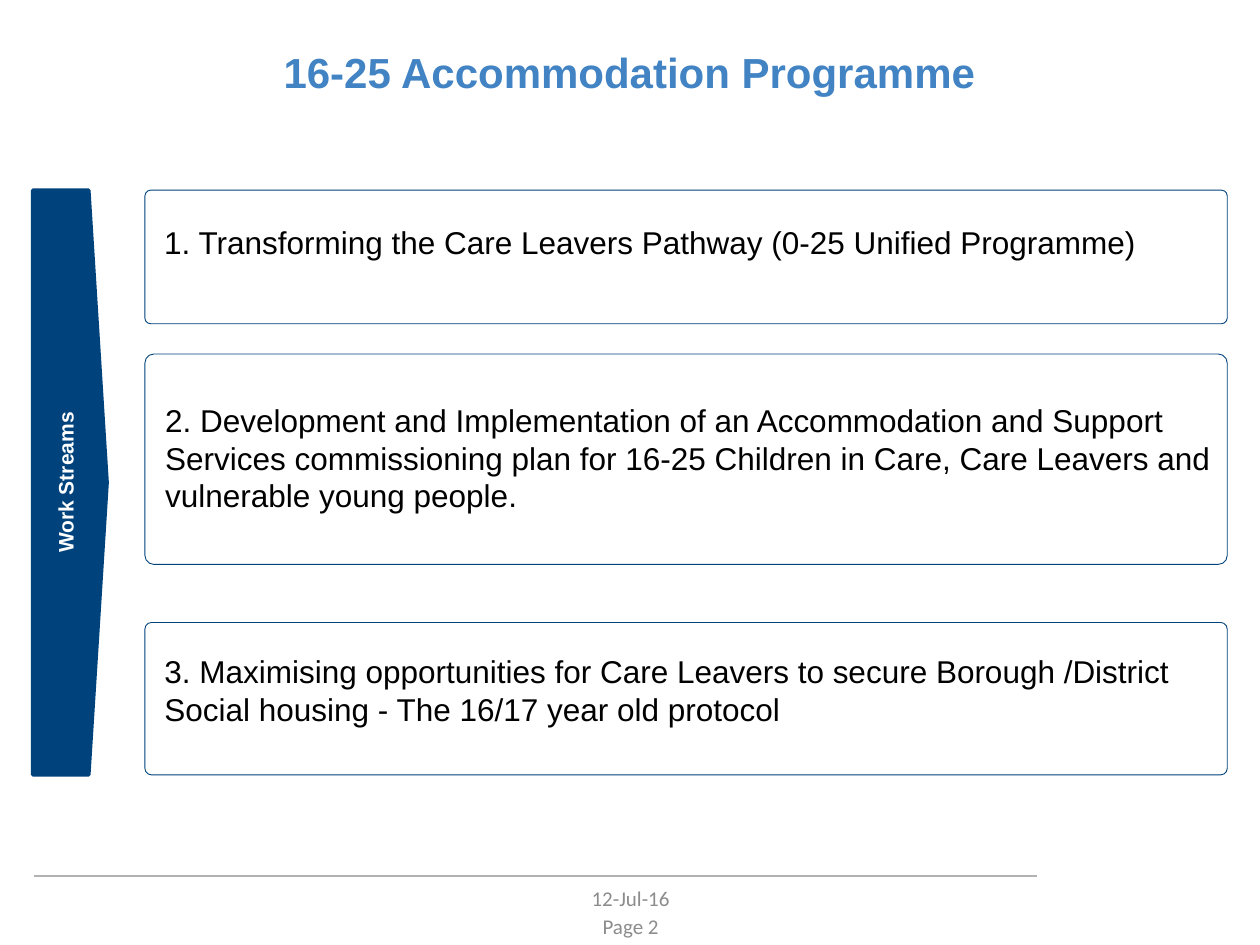
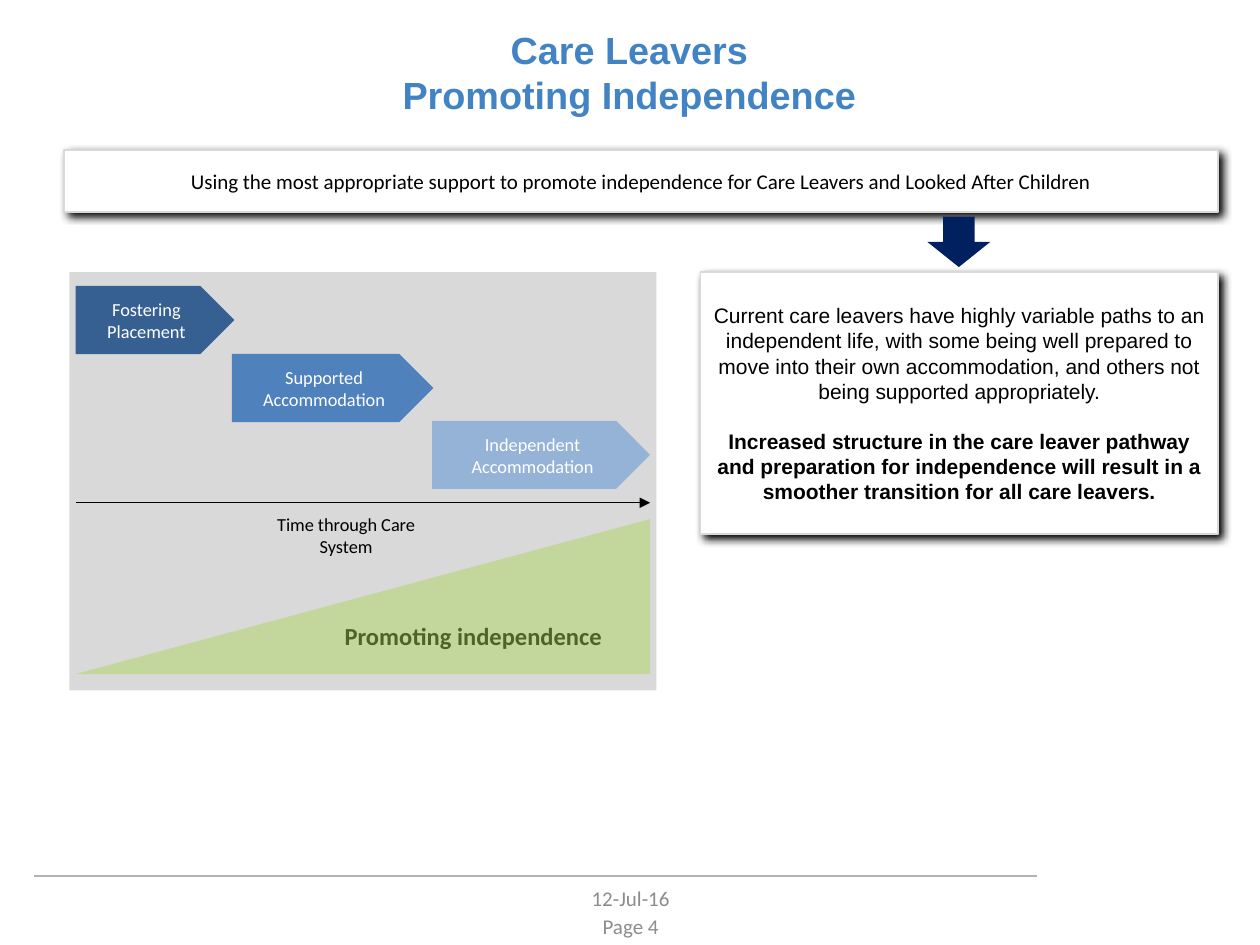
import pptx
import pptx.util
import pptx.dml.color
import pptx.enum.shapes
import pptx.enum.text
import pptx.oxml
import pptx.oxml.ns

Inches = pptx.util.Inches
Pt = pptx.util.Pt
SHAPE = pptx.enum.shapes.MSO_SHAPE
ALIGN = pptx.enum.text.PP_ALIGN
ANCHOR = pptx.enum.text.MSO_ANCHOR

NAVY = "00427C"
TITLE_BLUE = "4283C4"
FOOTER_GREY = "8C8C8C"
RULE_GREY = "B2B2B2"
PANEL_GREY = "D9D9D9"
WHITE = "FFFFFF"
BLACK = "000000"
DATE = "12-Jul-16"


def colour(value):
    """Turn a hex string into a colour."""
    return pptx.dml.color.RGBColor.from_string(value)


def write(shape, *texts, font="Arial", size=12, color=BLACK, bold=False, align=ALIGN.CENTER,
          anchor=ANCHOR.MIDDLE, insets=(0.1, 0.05, 0.1, 0.05), gap=0):
    """Fill a shape with one paragraph per text."""
    frame = shape.text_frame
    frame.word_wrap = True
    frame.vertical_anchor = anchor
    frame.margin_left, frame.margin_top, frame.margin_right, frame.margin_bottom = map(Inches, insets)
    for index, text in enumerate(texts):
        para = frame.add_paragraph() if index else frame.paragraphs[0]
        para.alignment = align
        if index:
            para.space_before = Pt(gap)
        para.text = text
        for span in para.runs:
            span.font.name = font
            span.font.size = Pt(size)
            span.font.bold = bold
            span.font.color.rgb = colour(color)
    return shape


def add_text(shapes, box, *texts, **style):
    """Add a text box."""
    return write(shapes.add_textbox(*map(Inches, box)), *texts, **style)


def add_shape(shapes, kind, box, fill=None, line=None, width=1, adjust=None):
    """Add a preset shape without its theme look."""
    shape = shapes.add_shape(kind, *map(Inches, box))
    shape.shadow.inherit = False
    if fill:
        shape.fill.solid()
        shape.fill.fore_color.rgb = colour(fill)
    else:
        shape.fill.background()
    if line:
        shape.line.color.rgb = colour(line)
        shape.line.width = Pt(width)
    else:
        shape.line.fill.background()
    if adjust is not None:
        shape.adjustments[0] = adjust
    return shape


def add_rule(shapes, left, right, top, color, width, arrow=False):
    """Add a level line, with an arrowhead if asked."""
    rule = shapes.add_connector(pptx.enum.shapes.MSO_CONNECTOR.STRAIGHT,
                                Inches(left), Inches(top), Inches(right), Inches(top))
    rule.line.color.rgb = colour(color)
    rule.line.width = Pt(width)
    if arrow:
        pptx.oxml.ns.qn("a:tailEnd")
        rule.line._get_or_add_ln().append(pptx.oxml.parse_xml(
            f'<a:tailEnd {pptx.oxml.ns.nsdecls("a")} type="triangle"/>'))
    rule._element.spPr.append(pptx.oxml.parse_xml(f'<a:effectLst {pptx.oxml.ns.nsdecls("a")}/>'))


def add_page(deck, title, size, number):
    """Add a blank page with the shared title and footer."""
    page = deck.slides.add_slide(deck.slide_layouts[6])
    add_rule(page.shapes, 0.27, 8.23, 6.95, RULE_GREY, 1)
    for top, text in ((7.02, DATE), (7.24, f"Page {number}")):
        add_text(page.shapes, (3.42, top, 3.17, 0.22), text, font="Calibri", color=FOOTER_GREY)
    add_text(page.shapes, (0.27, 0.3, 9.45, 0.54), title, size=size, color=TITLE_BLUE, bold=True)
    return page


def add_streams(page, box):
    """Draw the work streams band and its three cards."""
    left, top, width, height = box
    band = add_shape(page.shapes, SHAPE.PENTAGON, (left, top, 0.59, height), NAVY, NAVY, 2, 0.246)
    write(band, "Work Streams", color=WHITE, bold=True, insets=(0, 0, 0, 0))
    band.text_frame._txBody.bodyPr.set("vert", "vert270")
    cards = (
        (0, 1.06, 0.25, "1. Transforming the Care Leavers Pathway (0-25 Unified Programme)"),
        (1.3, 1.67, 0.35, "2. Development and Implementation of an Accommodation and Support Services "
         "commissioning plan for 16-25 Children in Care, Care Leavers and vulnerable young people."),
        (3.43, 1.21, 0.22, "3. Maximising opportunities for Care Leavers to secure Borough /District "
         "Social housing - The 16/17 year old protocol"),
    )
    indent = 0.89
    for offset, depth, inset, text in cards:
        card = add_shape(page.shapes, SHAPE.ROUNDED_RECTANGLE,
                         (left + indent, top + offset, width - indent, depth), None, NAVY, 0.5, 0.043)
        write(card, text, size=18, align=ALIGN.LEFT, anchor=ANCHOR.TOP, insets=(0.14, inset, 0.1, 0))


def add_pathway(page, box):
    """Draw the stages, the time arrow and the independence wedge."""
    left, top, width, height = box
    shapes = page.shapes.add_group_shape().shapes
    add_shape(shapes, SHAPE.RECTANGLE, box, PANEL_GREY)
    inner, span = left + 0.05, width - 0.1
    wedge = add_shape(shapes, SHAPE.RIGHT_TRIANGLE, (inner, top + 1.96, span, 1.23), "C3D69B")
    wedge._element.spPr.xfrm.set("flipH", "1")
    write(wedge, "Promoting independence", font="Calibri", size=14, color="4F6228", bold=True,
          align=ALIGN.RIGHT, insets=(0, 0, 0, 0))
    add_rule(shapes, inner, inner + span, top + 1.83, BLACK, 0.75, arrow=True)
    stages = (
        (0, 0.11, 1.26, "376092", WHITE, "Fostering Placement"),
        (1.24, 0.65, 1.6, "4F81BD", WHITE, "Supported Accommodation"),
        (2.83, 1.18, 1.73, "95B3D7", WHITE, "Independent Accommodation"),
        (1.35, 1.82, 1.73, None, BLACK, "Time through Care System"),
    )
    for across, down, length, fill, color, text in stages:
        stage = add_shape(shapes, SHAPE.PENTAGON, (inner + across, top + down, length, 0.54), fill)
        write(stage, text, font="Calibri", size=10.5, color=color)


def add_panel(page, box):
    """Add a white panel with a dark shadow."""
    panel = add_shape(page.shapes, SHAPE.RECTANGLE, box, WHITE, PANEL_GREY)
    effects = panel._element.spPr.find(pptx.oxml.ns.qn("a:effectLst"))
    effects.append(pptx.oxml.parse_xml(
        f'<a:outerShdw {pptx.oxml.ns.nsdecls("a")} blurRad="{Pt(5)}" dist="{Pt(2.9)}" dir="2700000" '
        f'algn="tl" rotWithShape="0"><a:srgbClr val="{BLACK}"/></a:outerShdw>'))
    return panel


def add_summary(page, box):
    """Draw the arrow and the panel of findings under it."""
    left, top, width, height = box
    add_shape(page.shapes, SHAPE.DOWN_ARROW, (left + 1.8, top - 0.44, 0.5, 0.4), "002060")
    panel = write(
        add_panel(page, box),
        "Current care leavers have highly variable paths to an independent life, with some being well "
        "prepared to move into their own accommodation, and others not being supported appropriately.",
        "Increased structure in the care leaver pathway and preparation for independence will result "
        "in a smoother transition for all care leavers.", gap=14)
    for span in panel.text_frame.paragraphs[1].runs:
        span.font.bold = True


def main():
    """Build and save the deck."""
    deck = pptx.Presentation()
    deck.slide_width, deck.slide_height = Inches(10), Inches(7.5)
    page = add_page(deck, "16-25 Accommodation Programme", 24, 2)
    add_streams(page, (0.26, 1.51, 9.48, 4.64))
    page = add_page(deck, "Care Leavers\nPromoting Independence", 21.6, 4)
    write(add_panel(page, (0.51, 1.19, 9.16, 0.49)),
          "Using the most appropriate support to promote independence for Care Leavers and "
          "Looked After Children", font="Calibri")
    add_pathway(page, (0.55, 2.16, 4.66, 3.32))
    add_summary(page, (5.56, 2.16, 4.11, 2.08))
    deck.save("out.pptx")


if __name__ == "__main__":
    main()
